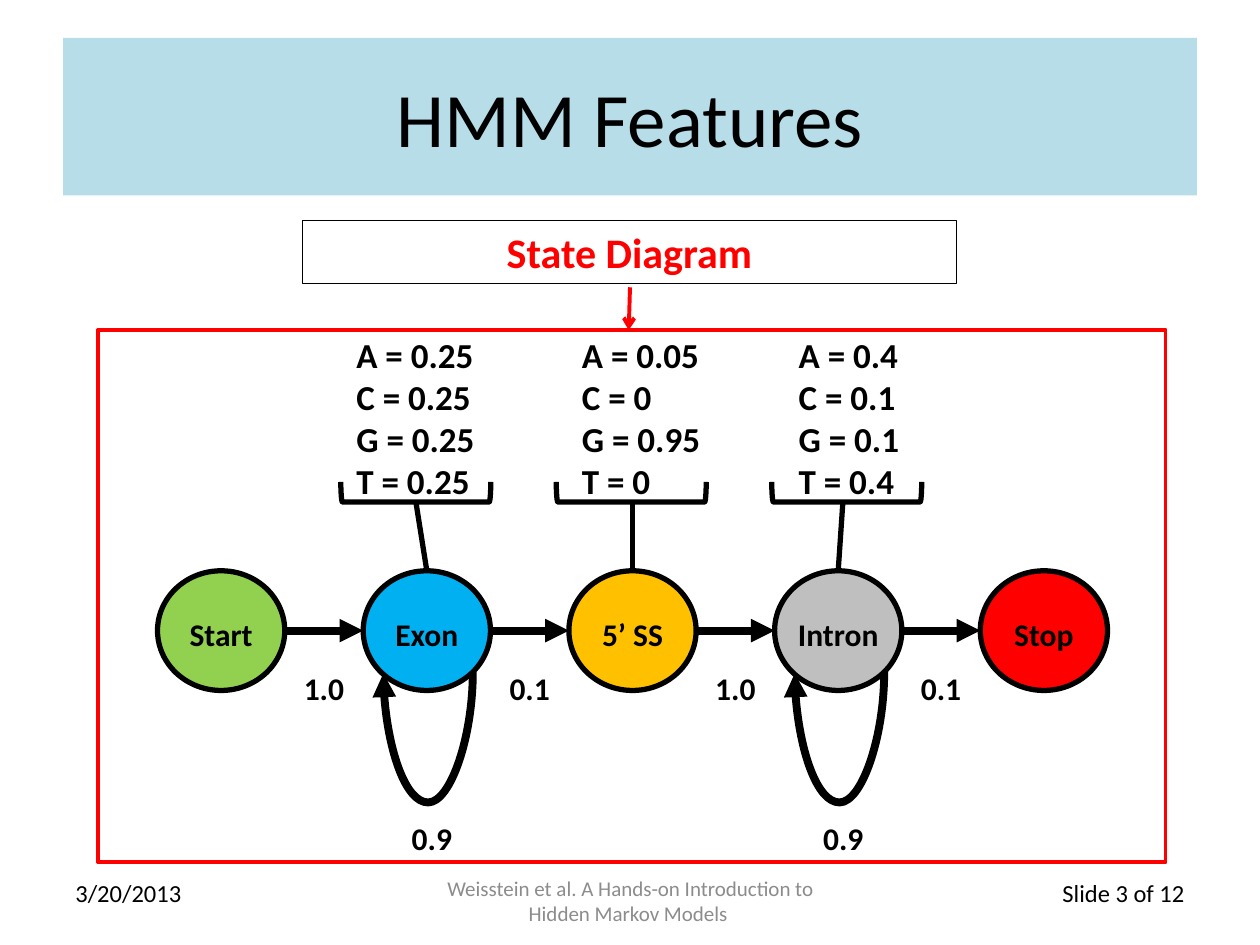
import dataclasses

import pptx
import pptx.dml.color
import pptx.enum.shapes
import pptx.enum.text
import pptx.oxml
import pptx.oxml.ns
import pptx.util

Inches = pptx.util.Inches
Pt = pptx.util.Pt
SHAPE = pptx.enum.shapes.MSO_SHAPE
CONNECTOR = pptx.enum.shapes.MSO_CONNECTOR
ALIGN = pptx.enum.text.PP_ALIGN
ANCHOR = pptx.enum.text.MSO_ANCHOR
qn = pptx.oxml.ns.qn


@dataclasses.dataclass(frozen=True)
class Theme:
    font: str = "Calibri"
    black: str = "000000"
    red: str = "FF0000"
    green: str = "92D050"
    blue: str = "00B0F0"
    gold: str = "FFC000"
    silver: str = "BFBFBF"
    title_fill: str = "B7DEE8"
    muted: str = "8C8C8C"
    title_size: int = 44
    heading_size: int = 24
    emission_size: int = 20
    label_size: int = 18
    footer_size: int = 14
    credit_size: int = 12
    outline: int = 3
    arrow: float = 4.5


def rgb(value):
    return pptx.dml.color.RGBColor.from_string(value)


class Deck:
    def __init__(self, theme):
        self.theme = theme
        self.prs = pptx.Presentation()
        self.prs.slide_width = Inches(10)
        self.prs.slide_height = Inches(7.5)
        self.s = self.prs.slides.add_slide(self.prs.slide_layouts[5])

    def set_text(self, sp, text, size, color, bold=False, align=ALIGN.LEFT, anchor=ANCHOR.TOP):
        tf = sp.text_frame
        tf.text = text
        tf.word_wrap = True
        tf.vertical_anchor = anchor
        for p in tf.paragraphs:
            p.alignment = align
            for r in p.runs:
                r.font.name = self.theme.font
                r.font.size = Pt(size)
                r.font.bold = bold
                r.font.color.rgb = rgb(color)

    def title(self, text, x, y, w, h):
        sp = self.s.shapes.title
        sp.left, sp.top, sp.width, sp.height = map(Inches, (x, y, w, h))
        sp.fill.solid()
        sp.fill.fore_color.rgb = rgb(self.theme.title_fill)
        self.set_text(sp, text, self.theme.title_size, self.theme.black,
                      align=ALIGN.CENTER, anchor=ANCHOR.MIDDLE)

    def text(self, text, x, y, w, h, size, color=Theme.black, **style):
        sp = self.s.shapes.add_textbox(*map(Inches, (x, y, w, h)))
        self.set_text(sp, text, size, color, **style)

    def shape(self, kind, x, y, w, h, line, width, fill=None):
        sp = self.s.shapes.add_shape(kind, *map(Inches, (x, y, w, h)))
        sp.shadow.inherit = False
        sp.line.color.rgb = rgb(line)
        sp.line.width = Pt(width)
        if fill:
            sp.fill.solid()
            sp.fill.fore_color.rgb = rgb(fill)
        else:
            sp.fill.background()
        return sp

    def state(self, name, x, y, w, h, fill):
        sp = self.shape(SHAPE.OVAL, x, y, w, h, self.theme.black, self.theme.outline, fill)
        self.set_text(sp, name, self.theme.label_size, self.theme.black, bold=True,
                      align=ALIGN.CENTER, anchor=ANCHOR.MIDDLE)
        tf = sp.text_frame
        tf.word_wrap = False
        tf.margin_left = tf.margin_right = tf.margin_bottom = 0
        return sp

    def line(self, x1, y1, x2, y2, width, color=Theme.black, arrow=None, kind=CONNECTOR.STRAIGHT):
        cx = self.s.shapes.add_connector(kind, *map(Inches, (x1, y1, x2, y2)))
        cx.line.color.rgb = rgb(color)
        cx.line.width = Pt(width)
        spPr = cx._element.spPr
        if arrow:
            tail = pptx.oxml.parse_xml(f'<a:tailEnd {pptx.oxml.ns.nsdecls("a")} type="{arrow}"/>')
            spPr.find(qn("a:ln")).append(tail)
        spPr.append(pptx.oxml.parse_xml(f'<a:effectLst {pptx.oxml.ns.nsdecls("a")}/>'))
        return cx

    def loop(self, center_x, y, span, depth):
        rise = 0.01
        cx = self.line(center_x - rise / 2, y - span / 2, center_x + rise / 2, y + span / 2,
                       self.theme.arrow, arrow="triangle", kind=CONNECTOR.CURVE)
        spPr = cx._element.spPr
        spPr.find(qn("a:xfrm")).set("rot", str(90 * 60000))
        guide = pptx.oxml.parse_xml(
            f'<a:gd {pptx.oxml.ns.nsdecls("a")} name="adj1" fmla="val {round(depth / rise * 100000)}"/>')
        spPr.find(qn("a:prstGeom")).find(qn("a:avLst")).append(guide)


def main():
    theme = Theme()
    deck = Deck(theme)
    deck.title("HMM Features", 0.5, 0.3, 9, 1.25)

    frame = deck.shape(SHAPE.FRAME, 0.78, 2.62, 8.47, 4.22, theme.red, 2, theme.red)
    frame.adjustments[0] = 0
    heading = deck.shape(SHAPE.RECTANGLE, 2.4, 1.75, 5.19, 0.5, theme.black, 0.75)
    deck.set_text(heading, "State Diagram", theme.heading_size, theme.red,
                  bold=True, align=ALIGN.CENTER)
    deck.line(5, 2.28, 4.99, 2.62, 2.25, theme.red, arrow="arrow")

    states = [("Start", theme.green), ("Exon", theme.blue), ("5’ SS", theme.gold),
              ("Intron", theme.silver), ("Stop", theme.red)]
    left, top, width, height = 1.25, 4.53, 1.01, 0.95
    pitch = (7.78 - left) / (len(states) - 1)
    middle = top + height / 2
    gap = pitch - width
    label = dict(size=theme.label_size, bold=True, align=ALIGN.CENTER)

    ovals = {}
    for i, (name, fill) in enumerate(states):
        ovals[name] = deck.state(name, left + i * pitch, top, width, height, fill)

    for i, chance in enumerate(["1.0", "0.1", "1.0", "0.1"]):
        x = left + width + i * pitch
        deck.line(x, middle, x + gap, middle, theme.arrow, arrow="triangle")
        deck.text(chance, x, 5.26, gap, 0.38, **label)

    for i in (1, 3):
        center = left + width / 2 + i * pitch
        deck.loop(center + 0.01, 5.34, 0.71, 1.05)
        deck.text("0.9", center - 0.27, 6.45, 0.62, 0.38, **label)

    emissions = [("Exon", 3.3, 3.3, 2.73, ("0.25", "0.25", "0.25", "0.25")),
                 ("5’ SS", 5.01, 5.02, 4.52, ("0.05", "0", "0.95", "0")),
                 ("Intron", 6.72, 6.69, 6.24, ("0.4", "0.1", "0.1", "0.4"))]
    for name, bracket_x, stem_x, text_x, chances in emissions:
        bracket = deck.shape(SHAPE.LEFT_BRACKET, bracket_x - 0.08, 3.31, 0.16, 1.19,
                             theme.black, theme.outline)
        bracket.rotation = 270
        stem = deck.line(stem_x, 3.98, stem_x, top, theme.outline)
        stem.end_connect(ovals[name], 0)
        rows = "\n".join(f"{base} = {chance}" for base, chance in zip("ACGT", chances))
        deck.text(rows, text_x, 2.6, 1.16, 1.45, theme.emission_size, bold=True)

    deck.text("3/20/2013", 0.5, 6.92, 2.33, 0.34, theme.footer_size)
    deck.text("Weisstein et al. A Hands-on Introduction to Hidden Markov Models ",
              3.42, 6.95, 3.17, 0.4, theme.credit_size, theme.muted,
              align=ALIGN.CENTER, anchor=ANCHOR.MIDDLE)
    deck.text("Slide 3 of 12", 7.17, 6.92, 2.33, 0.34, theme.footer_size, align=ALIGN.RIGHT)

    deck.prs.save("out.pptx")


if __name__ == "__main__":
    main()
